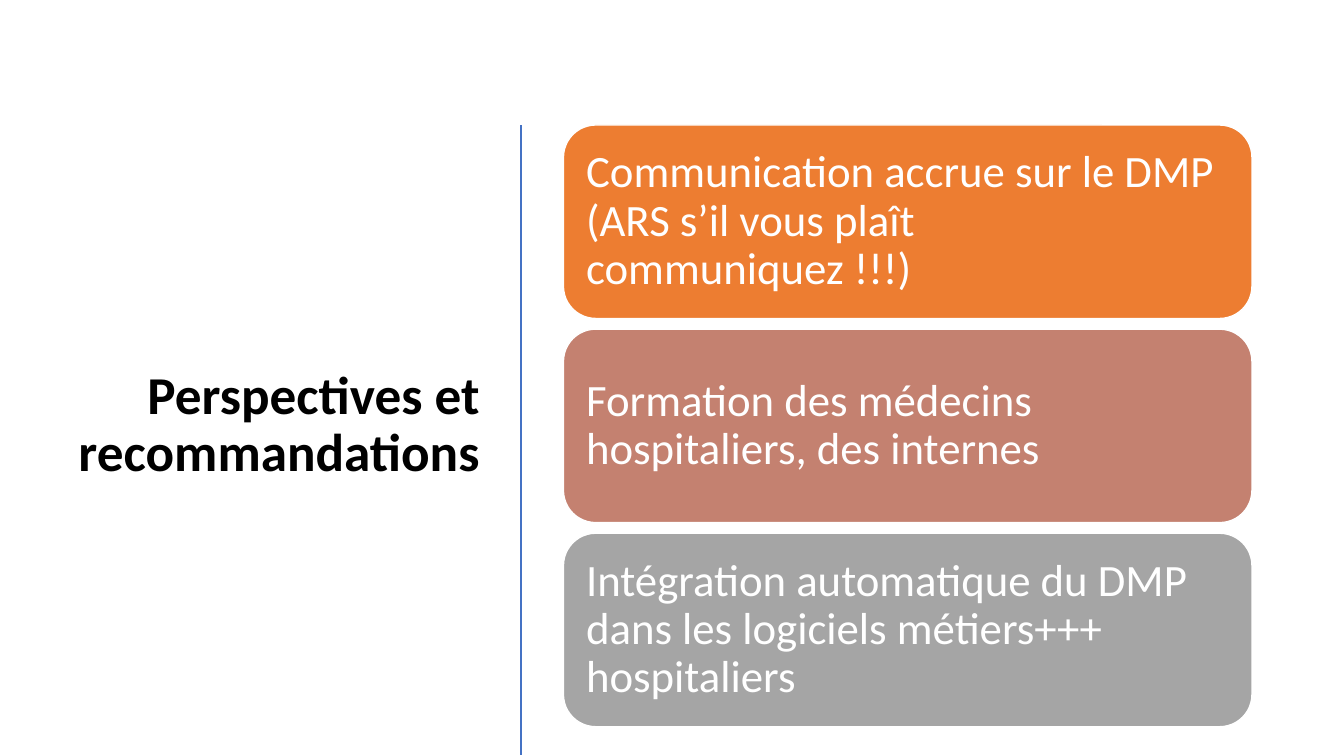
from dataclasses import dataclass

from pptx import Presentation
from pptx.dml.color import RGBColor
from pptx.enum import shapes, text
from pptx.oxml import ns, xmlchemy
from pptx.util import Pt


@dataclass(frozen=True)
class Theme:
    font: str = "Calibri"
    title_size: int = 38
    card_size: int = 32
    title_color: str = "000000"
    card_text: str = "FFFFFF"
    card_edge: str = "FFFFFF"
    divider: str = "4472C4"
    cards: tuple = ("ED7D31", "C48170", "A5A5A5")


THEME = Theme()

RECOMMENDATIONS = (
    "Communication accrue sur le DMP\v(ARS s’il vous plaît communiquez !!!)",
    "Formation des médecins hospitaliers, des internes",
    "Intégration automatique du DMP dans les logiciels métiers+++ hospitaliers",
)

# Card column, in points
CARD_LEFT, CARD_TOP = 402.5, 89.3
CARD_WIDTH, CARD_HEIGHT = 491.8, 138.2
CARD_PITCH = 145.8


def rgb(value):
    return RGBColor.from_string(value)


def write(frame, wording, size, color, align, inset, bold=False):
    """Fill a text frame with one vertically centred paragraph."""
    frame.word_wrap = True
    frame.vertical_anchor = text.MSO_ANCHOR.MIDDLE
    frame.margin_left = frame.margin_right = Pt(inset)
    frame.margin_top = frame.margin_bottom = Pt(inset)
    paragraph = frame.paragraphs[0]
    paragraph.text = wording
    paragraph.alignment = align
    paragraph.line_spacing = 0.9
    font = paragraph.font
    font.name, font.size, font.bold = THEME.font, Pt(size), bold
    font.color.rgb = rgb(color)


def add_title(slide, wording):
    title = slide.shapes.add_textbox(Pt(37.4), Pt(84.2), Pt(310.3), Pt(440))
    write(title.text_frame, wording, THEME.title_size, THEME.title_color,
          text.PP_ALIGN.RIGHT, 5, bold=True)


def add_divider(slide, x, top, bottom):
    divider = slide.shapes.add_connector(
        shapes.MSO_CONNECTOR.STRAIGHT, Pt(x), Pt(top), Pt(x), Pt(bottom))
    divider.line.color.rgb = rgb(THEME.divider)
    divider.line.width = Pt(2)
    properties = divider._element.spPr
    properties.append(xmlchemy.OxmlElement("a:effectLst"))


def add_card(slide, top, wording, color):
    card = slide.shapes.add_shape(
        shapes.MSO_SHAPE.ROUNDED_RECTANGLE,
        Pt(CARD_LEFT), Pt(top), Pt(CARD_WIDTH), Pt(CARD_HEIGHT))
    card.shadow.inherit = False
    card.fill.solid()
    card.fill.fore_color.rgb = rgb(color)
    card.line.color.rgb = rgb(THEME.card_edge)
    card.line.width = Pt(1)
    write(card.text_frame, wording, THEME.card_size, THEME.card_text,
          text.PP_ALIGN.LEFT, 9.4)


def main():
    deck = Presentation()
    deck.slide_width, deck.slide_height = Pt(960), Pt(540)
    slide = deck.slides.add_slide(deck.slide_layouts[6])

    # Title and divider
    add_title(slide, "Perspectives et recommandations")
    add_divider(slide, x=372.2, top=89.3, bottom=539.3)

    # Recommendation cards
    for row, (wording, color) in enumerate(zip(RECOMMENDATIONS, THEME.cards)):
        add_card(slide, CARD_TOP + row * CARD_PITCH, wording, color)

    deck.save("out.pptx")


if __name__ == "__main__":
    main()
